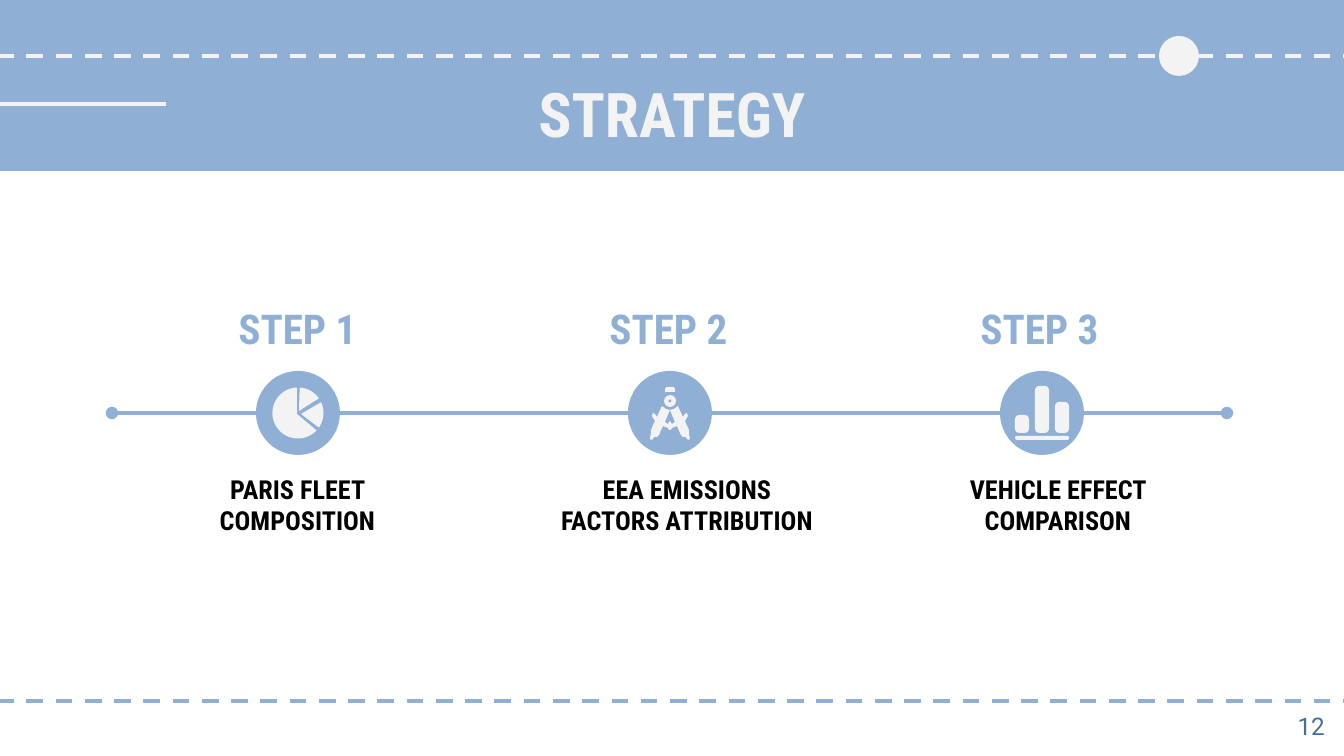
import math

import pptx
import pptx.dml.color
import pptx.enum.dml
import pptx.enum.shapes
import pptx.enum.text
import pptx.oxml.ns
import pptx.oxml.xmlchemy
import pptx.util

RGB = pptx.dml.color.RGBColor
BLUE = RGB(0x8F, 0xB0, 0xD4)
LIGHT = RGB(0xF3, 0xF3, 0xF3)
BLACK = RGB(0, 0, 0)
NUMBER_BLUE = RGB(0x43, 0x6F, 0x9E)
SHAPE = pptx.enum.shapes.MSO_SHAPE
ALIGN = pptx.enum.text.PP_ALIGN
CONDENSED = "Roboto Condensed"
EMU_PER_PX = 914400 / 134.4

# Content: label, description, left and width of the description box
TITLE = "STRATEGY"
STEPS = [
    ("STEP 1", "PARIS FLEET COMPOSITION", 173, 249),
    ("STEP 2", "EEA EMISSIONS FACTORS ATTRIBUTION", 544, 286),
    ("STEP 3", "VEHICLE EFFECT COMPARISON", 915, 286),
]
PAGE_NUMBER = "12"

# Timeline geometry, px
FIRST_X, STEP_PITCH, TIMELINE_Y, DISC = 298, 372, 413, 84
LABEL_LEFT, LABEL_PITCH, LABEL_WIDTH = 173, 371, 249

# Icon parts, px from the centre of their disc
PIE_RADIUS = 25.5
PIE_SLICES = [  # tip, start and end angle, clockwise from the right
    ((-1, 1), 43, 268),
    ((1, -2), 274, 327),
    ((3, 1), 335, 396),
]
COMPASS_LEG = [
    (0, -3), (4, -4), (8, -7), (13, 4), (15, 1), (17, 0), (18, 3), (15, 8),
    (19, 17), (19, 21), (20, 25), (19, 27), (17, 26), (16, 24), (13, 24),
    (11, 22), (7, 13), (2, 15), (1, 17), (0, 17), (0, 8), (2, 11), (5, 9),
]
BARS = [(-27, 2, 14, 18, 0.3), (-7, -27, 14, 47, 0.3),
        (13, -11, 14, 31, 0.3), (-27, 23, 54, 4, 0.5)]


def px(value):
    return pptx.util.Emu(round(value * EMU_PER_PX))


presentation = pptx.Presentation()
presentation.slide_width, presentation.slide_height = px(1344), px(756)
slide = presentation.slides.add_slide(presentation.slide_layouts[5])


def paint(shape, color):
    shape.shadow.inherit = False
    shape.fill.solid()
    shape.fill.fore_color.rgb = color
    shape.line.fill.background()
    return shape


def add_solid(kind, left, top, width, height, color):
    shape = slide.shapes.add_shape(kind, px(left), px(top), px(width), px(height))
    return paint(shape, color)


def add_outline(points, center_x):
    corners = [(px(center_x + x), px(TIMELINE_Y + y)) for x, y in points]
    builder = slide.shapes.build_freeform(*corners[0])
    builder.add_line_segments(corners[1:], close=True)
    paint(builder.convert_to_shape(), LIGHT)


def add_rule(left, right, y, color, dashed=False, dots=False):
    rule = slide.shapes.add_connector(
        pptx.enum.shapes.MSO_CONNECTOR.STRAIGHT, px(left), px(y), px(right), px(y))
    rule.line.color.rgb = color
    rule.line.width = pptx.util.Pt(2.25)
    if dashed:
        rule.line.dash_style = pptx.enum.dml.MSO_LINE.DASH
    properties = rule.element.find(pptx.oxml.ns.qn("p:spPr"))
    if dots:
        for end in ("a:headEnd", "a:tailEnd"):
            dot = pptx.oxml.xmlchemy.OxmlElement(end)
            dot.set("type", "oval")
            properties.find(pptx.oxml.ns.qn("a:ln")).append(dot)
    properties.append(pptx.oxml.xmlchemy.OxmlElement("a:effectLst"))


def write(box, text, size, color, font=CONDENSED, bold=True, align=ALIGN.CENTER):
    frame = box.text_frame
    frame.text = text
    frame.word_wrap = True
    frame.auto_size = pptx.enum.text.MSO_AUTO_SIZE.NONE
    frame.vertical_anchor = pptx.enum.text.MSO_ANCHOR.TOP
    frame.margin_left = frame.margin_right = pptx.util.Inches(0.1)
    frame.margin_top = frame.margin_bottom = pptx.util.Inches(0.1)
    paragraph = frame.paragraphs[0]
    paragraph.alignment = align
    paragraph.font.name = font
    paragraph.font.size = pptx.util.Pt(size)
    paragraph.font.bold = bold
    paragraph.font.color.rgb = color


def add_text(left, top, width, height, *style, **options):
    box = slide.shapes.add_textbox(px(left), px(top), px(width), px(height))
    write(box, *style, **options)


def add_pie_icon(center_x):
    for tip, start, end in PIE_SLICES:
        arc = [(PIE_RADIUS * math.cos(math.radians(angle)),
                PIE_RADIUS * math.sin(math.radians(angle)))
               for angle in range(start, end + 1, 3)]
        add_outline([tip] + arc, center_x)


def add_compass_icon(center_x):
    for side in (-1, 1):
        add_outline([(side * x, y) for x, y in COMPASS_LEG], center_x)
    hinge = add_solid(SHAPE.DONUT, center_x - 6, TIMELINE_Y - 18, 12, 12, LIGHT)
    hinge.adjustments[0] = 0.37
    cap = add_solid(SHAPE.ROUND_2_SAME_RECTANGLE, center_x - 5, TIMELINE_Y - 26,
                    10, 5, LIGHT)
    cap.adjustments[0] = 0.5


def add_bars_icon(center_x):
    for x, y, width, height, rounding in BARS:
        bar = add_solid(SHAPE.ROUNDED_RECTANGLE, center_x + x, TIMELINE_Y + y,
                        width, height, LIGHT)
        bar.adjustments[0] = rounding


# Header band and footer rule
add_solid(SHAPE.RECTANGLE, -3, 0, 1350, 171, BLUE)
add_rule(-3, 1347, 56, LIGHT, dashed=True)
add_rule(-4, 166, 104, LIGHT)
add_solid(SHAPE.OVAL, 1159, 36, 40, 40, LIGHT)
add_rule(-3, 1347, 701, BLUE, dashed=True)

# Title, brought in front of the band
title = slide.shapes.title
title.left, title.top, title.width, title.height = px(105), px(62), px(1134), px(85)
write(title, TITLE, 33, LIGHT)
title.element.getparent().append(title.element)

# Timeline with its steps
add_rule(112, 1227, TIMELINE_Y, BLUE, dots=True)
icons = [add_pie_icon, add_compass_icon, add_bars_icon]
for index, ((label, description, left, width), add_icon) in enumerate(zip(STEPS, icons)):
    center_x = FIRST_X + index * STEP_PITCH
    add_text(left, 460, width, 70, description, 14, BLACK)
    add_text(LABEL_LEFT + index * LABEL_PITCH, 290, LABEL_WIDTH, 70, label, 22, BLUE)
    add_solid(SHAPE.OVAL, center_x - DISC / 2, TIMELINE_Y - DISC / 2, DISC, DISC, BLUE)
    add_icon(center_x)

# Page number
add_text(1258, 698, 80, 58, PAGE_NUMBER, 13, NUMBER_BLUE,
         font="Roboto", bold=False, align=ALIGN.RIGHT)

presentation.save("out.pptx")
